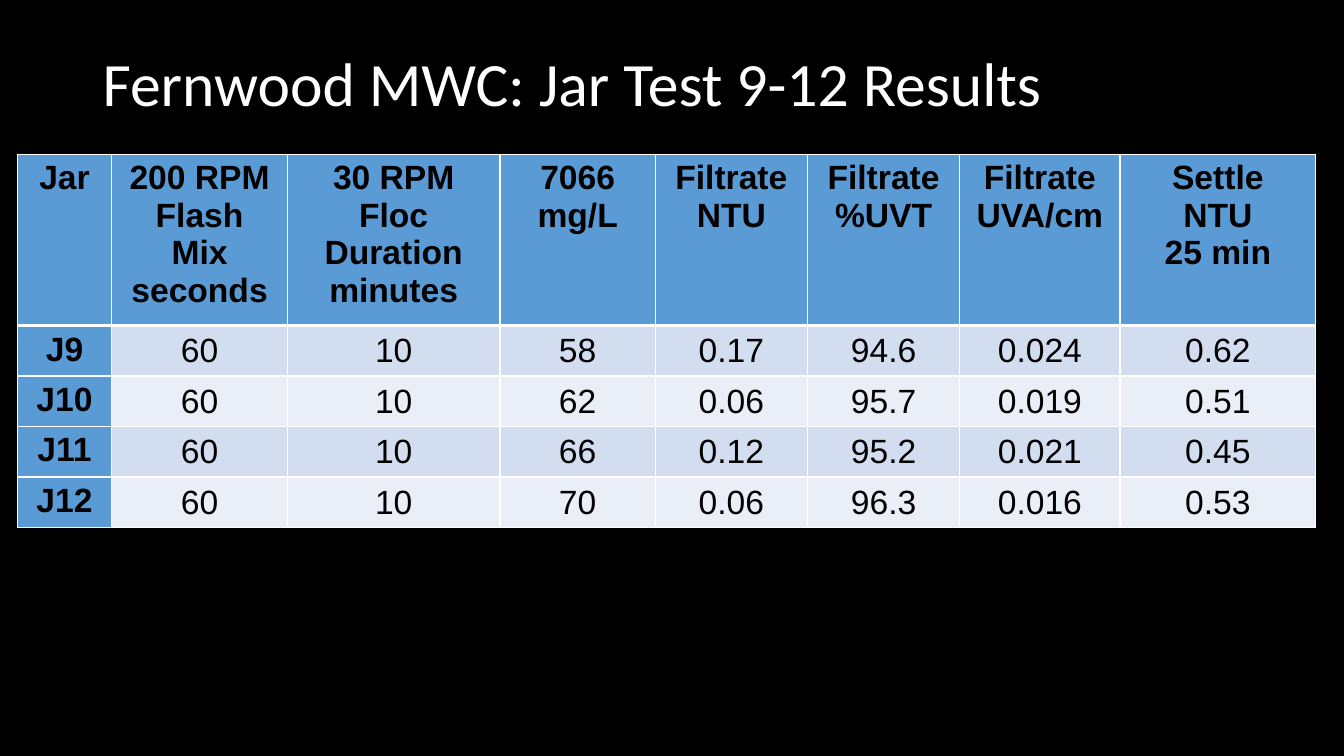
from pptx import Presentation
from pptx.dml.color import RGBColor
from pptx.enum.text import MSO_ANCHOR as Anchor, PP_ALIGN as Align
from pptx.oxml import parse_xml
from pptx.oxml.ns import nsdecls
from pptx.util import Inches, Pt

HEADERS = ["Jar", "200 RPM\nFlash\nMix\nseconds", "30 RPM Floc\nDuration\nminutes",
           "7066\nmg/L", "Filtrate\nNTU", "Filtrate\n%UVT", "Filtrate\nUVA/cm",
           "Settle\nNTU\n25 min"]
RESULTS = [
    ["J9", "60", "10", "58", "0.17", "94.6", "0.024", "0.62"],
    ["J10", "60", "10", "62", "0.06", "95.7", "0.019", "0.51"],
    ["J11", "60", "10", "66", "0.12", "95.2", "0.021", "0.45"],
    ["J12", "60", "10", "70", "0.06", "96.3", "0.016", "0.53"],
]
COL_WIDTHS = [0.94, 1.74, 2.11, 1.54, 1.51, 1.51, 1.59, 1.94]
HEADER_HEIGHT, ROW_HEIGHT = 1.59, 0.47
BLACK, WHITE, BLUE = "000000", "FFFFFF", "5B9BD5"
BANDS = ["D2DEEF", "EAEFF7"]


def rgb(color):
    return RGBColor.from_string(color)


def write(tf, text, color, align=Align.LEFT, line_spacing=None, **font):
    """Write one paragraph per line of text."""
    for i, line in enumerate(text.split("\n")):
        p = tf.paragraphs[0] if i == 0 else tf.add_paragraph()
        p.alignment = align
        p.line_spacing = line_spacing
        r = p.add_run()
        r.text = line
        for name, value in font.items():
            setattr(r.font, name, value)
        r.font.color.rgb = rgb(color)


def add_title(slide, text, left, top, width, height):
    tf = slide.shapes.add_textbox(*map(Inches, (left, top, width, height))).text_frame
    tf.word_wrap = True
    tf.vertical_anchor = Anchor.MIDDLE
    write(tf, text, WHITE, line_spacing=0.9, name="Calibri", size=Pt(44))


def set_borders(cell, **widths):
    """Draw white cell edges; widths are points by side, in L, R, T, B order."""
    tcPr = cell._tc.get_or_add_tcPr()
    for i, (side, width) in enumerate(widths.items()):
        tcPr.insert(i, parse_xml(
            f'<a:ln{side} {nsdecls("a")} w="{Pt(width)}"><a:solidFill>'
            f'<a:srgbClr val="{WHITE}"/></a:solidFill></a:ln{side}>'))


def style_cell(cell, row, col):
    label = row == 0 or col == 0
    cell.fill.solid()
    cell.fill.fore_color.rgb = rgb(BLUE if label else BANDS[(row - 1) % 2])
    set_borders(cell, L=1, R=1, T=3 if row == 1 else 1, B=3 if row == 0 else 1)
    if not label:
        cell.vertical_anchor = Anchor.MIDDLE
        for side in ("left", "right", "top"):
            setattr(cell, f"margin_{side}", Inches(0.01))
        cell.margin_bottom = 0
    return label


def add_results(slide, left, top):
    rows = [HEADERS, *RESULTS]
    heights = [HEADER_HEIGHT] + [ROW_HEIGHT] * len(RESULTS)
    box = map(Inches, (left, top, sum(COL_WIDTHS), sum(heights)))
    table = slide.shapes.add_table(len(rows), len(HEADERS), *box).table
    table.first_col = True
    for column, width in zip(table.columns, COL_WIDTHS):
        column.width = Inches(width)
    for i, (values, height) in enumerate(zip(rows, heights)):
        table.rows[i].height = Inches(height)
        for j, text in enumerate(values):
            cell = table.cell(i, j)
            bold = style_cell(cell, i, j)
            write(cell.text_frame, text, BLACK, Align.CENTER,
                  name="Arial", size=Pt(24), bold=bold)


def main():
    prs = Presentation()
    prs.slide_width, prs.slide_height = Inches(13.33), Inches(7.5)
    slide = prs.slides.add_slide(prs.slide_layouts[6])
    # Background
    slide.background.fill.solid()
    slide.background.fill.fore_color.rgb = rgb(BLACK)
    # Title and results table
    add_title(slide, "Fernwood MWC: Jar Test 9-12 Results", 0.92, 0.13, 11.5, 1.45)
    add_results(slide, 0.17, 1.53)
    prs.save("out.pptx")


if __name__ == "__main__":
    main()
